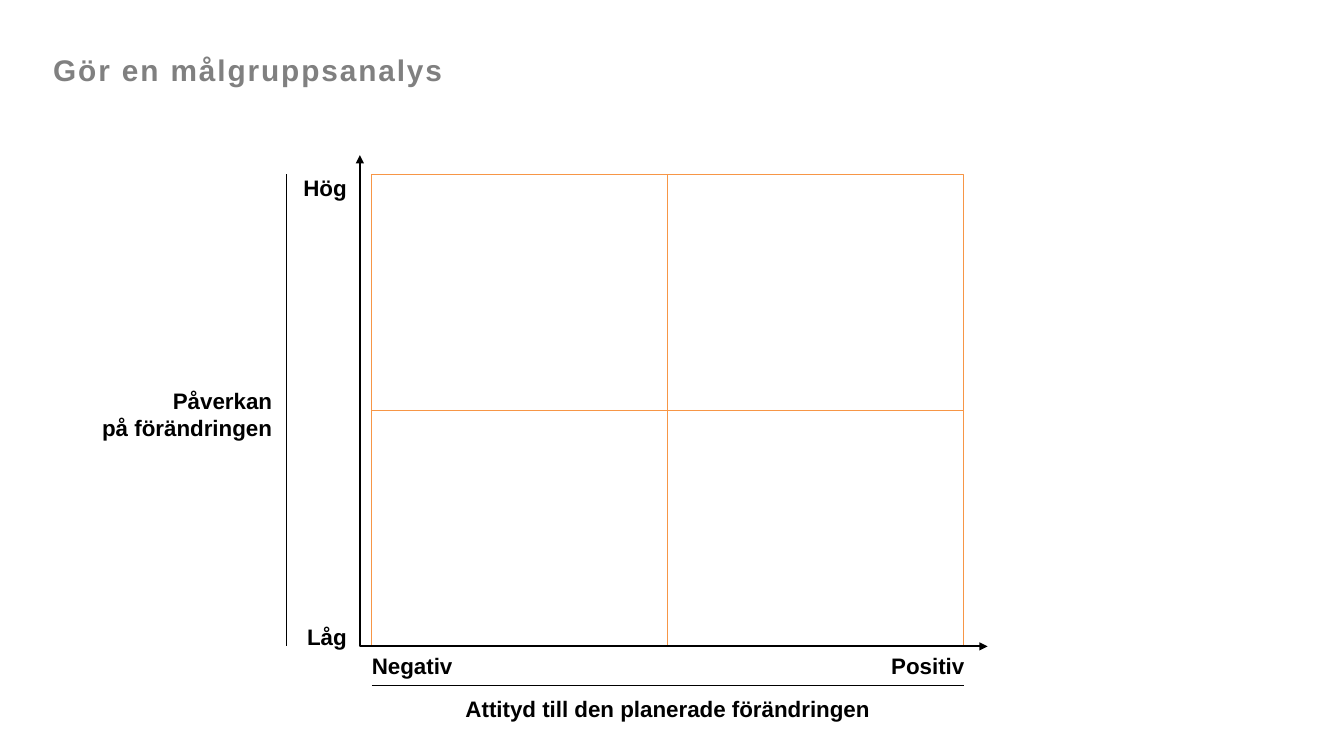
from dataclasses import dataclass

from lxml import etree
from pptx import Presentation
from pptx.dml.color import RGBColor
from pptx.enum.shapes import MSO_CONNECTOR, MSO_SHAPE
from pptx.enum.text import MSO_ANCHOR, MSO_AUTO_SIZE, PP_ALIGN
from pptx.oxml.ns import qn
from pptx.util import Cm, Pt

STRAIGHT = MSO_CONNECTOR.STRAIGHT
RECTANGLE = MSO_SHAPE.RECTANGLE
TOP = MSO_ANCHOR.TOP
GROW, FIXED = MSO_AUTO_SIZE.SHAPE_TO_FIT_TEXT, MSO_AUTO_SIZE.NONE
LEFT, CENTER, RIGHT = PP_ALIGN.LEFT, PP_ALIGN.CENTER, PP_ALIGN.RIGHT

COLORS = {"ink": "000000", "title": "808080", "quadrant": "F79646"}
FONT = "Arial"

# Matrix geometry in centimetres
MATRIX_LEFT, MATRIX_TOP = 9.37, 4.39
QUADRANT_WIDTH, QUADRANT_HEIGHT = 7.46, 5.95
MATRIX_RIGHT = MATRIX_LEFT + 2 * QUADRANT_WIDTH
MATRIX_BOTTOM = MATRIX_TOP + 2 * QUADRANT_HEIGHT
AXIS_LEFT, AXIS_TOP, AXIS_RIGHT = 9.07, 3.91, 24.89


@dataclass(frozen=True)
class Label:
    text: str
    left: float
    top: float
    width: float
    height: float = 0.69
    align: PP_ALIGN = LEFT
    size: float = 16
    color: str = "ink"
    inset_x: float = 0
    inset_y: float = 0
    wrap: bool = False
    tracking: float = 0


@dataclass(frozen=True)
class Rule:
    x1: float
    y1: float
    x2: float
    y2: float


TITLE = Label("Gör en målgruppsanalys", 1.09, 1.17, 23.8, 1.27, size=21.33,
              color="title", inset_x=0.25, inset_y=0.13, wrap=True, tracking=1.33)

LABELS = [
    Label("Hög", 7.54, MATRIX_TOP, 1.2, align=RIGHT),
    Label("Låg", 7.54, 15.7, 1.2, align=RIGHT),
    Label("Påverkan\vpå förändringen", 2.46, 9.75, 4.4, 1.37, align=RIGHT),
    Label("Negativ", MATRIX_LEFT, 16.43, 2.1),
    Label("Positiv", 22.46, 16.43, 1.9),
    Label("Attityd till den planerade förändringen", 11.63, 17.51, 10.4, align=CENTER),
]

RULES = [
    Rule(7.23, MATRIX_TOP, 7.23, MATRIX_BOTTOM),
    Rule(MATRIX_LEFT, 17.27, MATRIX_RIGHT, 17.27),
]


def rgb(name: str) -> RGBColor:
    return RGBColor.from_string(COLORS[name])


def style_line(shape, color: str, width: float) -> None:
    shape.line.color.rgb = rgb(color)
    shape.line.width = Pt(width)


def add_label(page, label: Label) -> None:
    box = page.shapes.add_textbox(Cm(label.left), Cm(label.top),
                                  Cm(label.width), Cm(label.height))
    frame = box.text_frame
    frame.word_wrap = label.wrap
    frame.auto_size = FIXED if label.wrap else GROW
    frame.vertical_anchor = TOP
    frame.margin_left = frame.margin_right = Cm(label.inset_x)
    frame.margin_top = frame.margin_bottom = Cm(label.inset_y)
    frame.text = label.text
    para = frame.paragraphs[0]
    para.alignment = label.align
    for span in para.runs:
        span.font.name = FONT
        span.font.size = Pt(label.size)
        span.font.bold = True
        span.font.color.rgb = rgb(label.color)
        if label.tracking:
            span.font._element.set("spc", str(round(label.tracking * 100)))


def add_rule(page, rule: Rule) -> None:
    line = page.shapes.add_connector(STRAIGHT, Cm(rule.x1), Cm(rule.y1),
                                     Cm(rule.x2), Cm(rule.y2))
    style_line(line, "ink", 0.75)
    etree.SubElement(line._element.spPr, qn("a:effectLst"))


def add_quadrant(page, column: int, row: int) -> None:
    quadrant = page.shapes.add_shape(
        RECTANGLE,
        Cm(MATRIX_LEFT + column * QUADRANT_WIDTH),
        Cm(MATRIX_TOP + row * QUADRANT_HEIGHT),
        Cm(QUADRANT_WIDTH), Cm(QUADRANT_HEIGHT))
    quadrant.shadow.inherit = False
    quadrant.fill.background()
    style_line(quadrant, "quadrant", 0.75)


def add_axes(page) -> None:
    builder = page.shapes.build_freeform(Cm(AXIS_LEFT), Cm(AXIS_TOP))
    builder.add_line_segments([(Cm(AXIS_LEFT), Cm(MATRIX_BOTTOM)),
                               (Cm(AXIS_RIGHT), Cm(MATRIX_BOTTOM))], close=False)
    axes = builder.convert_to_shape()
    axes.shadow.inherit = False
    axes.fill.background()
    style_line(axes, "ink", 1.5)
    outline = axes.line._get_or_add_ln()
    for end in ("a:headEnd", "a:tailEnd"):
        etree.SubElement(outline, qn(end), type="triangle")


def main() -> None:
    deck = Presentation()
    deck.slide_width, deck.slide_height = Cm(33.87), Cm(19.05)
    page = deck.slides.add_slide(deck.slide_layouts[6])

    # Axis labels and rules
    for label in LABELS:
        add_label(page, label)
    for rule in RULES:
        add_rule(page, rule)

    # Two by two matrix
    for column in range(2):
        for row in range(2):
            add_quadrant(page, column, row)
    add_axes(page)

    # Title
    add_label(page, TITLE)
    deck.save("out.pptx")


if __name__ == "__main__":
    main()
